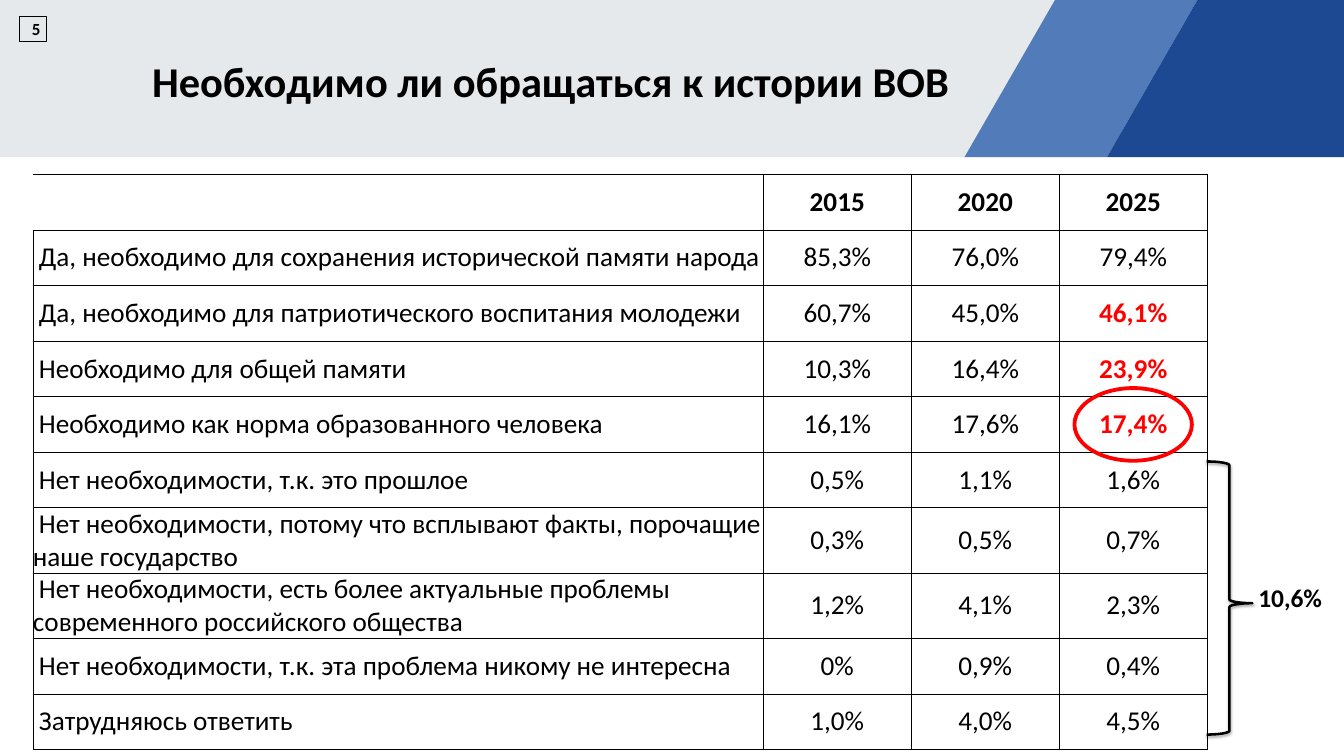
from dataclasses import dataclass

from lxml.etree import SubElement
from pptx import Presentation
from pptx.dml.color import RGBColor
from pptx.enum.shapes import MSO_SHAPE as Shape
from pptx.enum.text import MSO_ANCHOR as Anchor, PP_ALIGN as Align
from pptx.oxml import parse_xml
from pptx.oxml.ns import nsdecls, qn
from pptx.util import Cm, Pt


@dataclass(frozen=True)
class Theme:
    font: str = "Calibri"
    ink: str = "000000"
    accent: str = "FF0000"
    pale: str = "E6E9EB"
    blue: str = "517BB9"
    navy: str = "1D4992"
    title: float = 50
    body: float = 32
    total: float = 30
    number: float = 20
    grid: float = 0.5


@dataclass(frozen=True)
class Box:
    left: float
    top: float
    width: float
    height: float

    def emu(self) -> tuple:
        return Cm(self.left), Cm(self.top), Cm(self.width), Cm(self.height)


@dataclass(frozen=True)
class Band:
    color: str
    bottom_left: float
    bottom_right: float
    top_left: float
    top_right: float


@dataclass(frozen=True)
class Answer:
    label: str
    shares: tuple
    highlight: bool = False


@dataclass(frozen=True)
class Outline:
    kind: Shape
    box: Box
    color: str
    weight: float


THEME = Theme()
WIDTH, HEIGHT, HEADER = 55.85, 31.42, 6.53
FIRST_LINE = 0.25
COLUMNS = (30.35, 6.15, 6.15, 6.15)
ROW = 2.31
YEARS = ("2015", "2020", "2025")
BANDS = (
    Band(THEME.pale, 0, 40.16, 0, 43.92),
    Band(THEME.blue, 40.08, 46, 43.84, 49.76),
    Band(THEME.navy, 46, WIDTH, 49.76, WIDTH),
)
ANSWERS = (
    Answer("Да, необходимо для сохранения исторической памяти народа", ("85,3%", "76,0%", "79,4%")),
    Answer("Да, необходимо для патриотического воспитания молодежи", ("60,7%", "45,0%", "46,1%"), True),
    Answer("Необходимо для общей памяти", ("10,3%", "16,4%", "23,9%"), True),
    Answer("Необходимо как норма образованного человека", ("16,1%", "17,6%", "17,4%"), True),
    Answer("Нет необходимости, т.к. это прошлое", ("0,5%", "1,1%", "1,6%")),
    Answer("Нет необходимости, потому что всплывают факты, порочащие наше государство",
           ("0,3%", "0,5%", "0,7%")),
    Answer("Нет необходимости, есть более актуальные проблемы современного российского общества",
           ("1,2%", "4,1%", "2,3%")),
    Answer("Нет необходимости, т.к. эта проблема никому не интересна", ("0%", "0,9%", "0,4%")),
    Answer("Затрудняюсь ответить", ("1,0%", "4,0%", "4,5%")),
)
NUMBER_FRAME = Outline(Shape.RECTANGLE, Box(0.81, 0.66, 1.12, 1.07), THEME.ink, 0.75)
BRACE = Outline(Shape.RIGHT_BRACE, Box(50.14, 19.18, 1.9, 11.35), THEME.ink, 3)
RING = Outline(Shape.OVAL, Box(44.65, 16.13, 4.88, 3.02), THEME.accent, 4.5)


def write(tf, text: str, size: float, bold: bool = True, color: str = THEME.ink,
          align: Align = Align.LEFT, indent: float = 0) -> None:
    tf.text = text
    p = tf.paragraphs[0]
    p.alignment = align
    if indent:
        p._p.get_or_add_pPr().set("indent", str(Cm(indent)))
    for r in p.runs:
        r.font.name = THEME.font
        r.font.size = Pt(size)
        r.font.bold = bold
        r.font.color.rgb = RGBColor.from_string(color)


def add_band(s, band: Band) -> None:
    builder = s.shapes.build_freeform(Cm(band.bottom_right), Cm(HEADER))
    builder.add_line_segments([
        (Cm(band.bottom_left), Cm(HEADER)),
        (Cm(band.top_left), 0),
        (Cm(band.top_right), 0),
    ])
    sp = builder.convert_to_shape()
    sp.shadow.inherit = False
    sp.fill.solid()
    sp.fill.fore_color.rgb = RGBColor.from_string(band.color)
    sp.line.fill.background()


def add_outline(s, outline: Outline):
    sp = s.shapes.add_shape(outline.kind, *outline.box.emu())
    sp.shadow.inherit = False
    sp.fill.background()
    sp.line.color.rgb = RGBColor.from_string(outline.color)
    sp.line.width = Pt(outline.weight)
    return sp


def add_text(s, box: Box, text: str, size: float, **style):
    tf = s.shapes.add_textbox(*box.emu()).text_frame
    tf.word_wrap = True
    write(tf, text, size, **style)
    return tf


def set_borders(cell, open_left: bool) -> None:
    tcPr = cell._tc.get_or_add_tcPr()
    for i, side in enumerate("LRTB"):
        hidden = open_left and side == "L"
        fill = "<a:noFill/>" if hidden else f'<a:solidFill><a:srgbClr val="{THEME.ink}"/></a:solidFill>'
        tcPr.insert(i, parse_xml(
            f'<a:ln{side} {nsdecls("a")} w="{Pt(THEME.grid)}">{fill}</a:ln{side}>'))


def add_answers(s) -> None:
    rows = len(ANSWERS) + 1
    box = Box(1.37, 7.24, sum(COLUMNS), ROW * rows)
    table = s.shapes.add_table(rows, len(COLUMNS), *box.emu()).table
    table.first_row = table.horz_banding = False
    for column, width in zip(table.columns, COLUMNS):
        column.width = Cm(width)
    for i, row in enumerate(table.rows):
        row.height = Cm(ROW)
        for j, cell in enumerate(row.cells):
            cell.margin_left = cell.margin_right = cell.margin_top = cell.margin_bottom = 0
            cell.vertical_anchor = Anchor.MIDDLE
            cell.fill.background()
            set_borders(cell, open_left=i == j == 0)
    for j, year in enumerate(YEARS, 1):
        write(table.cell(0, j).text_frame, year, THEME.body, align=Align.CENTER)
    for i, answer in enumerate(ANSWERS, 1):
        write(table.cell(i, 0).text_frame, answer.label, THEME.body, bold=False, indent=FIRST_LINE)
        for j, share in enumerate(answer.shares, 1):
            marked = answer.highlight and j == len(YEARS)
            write(table.cell(i, j).text_frame, share, THEME.body, bold=marked,
                  color=THEME.accent if marked else THEME.ink, align=Align.CENTER)


def add_brace(s) -> None:
    sp = add_outline(s, BRACE)
    sp.adjustments[0], sp.adjustments[1] = 0.083, 0.519
    effects = sp._element.spPr.find(qn("a:effectLst"))
    shadow = SubElement(effects, qn("a:outerShdw"), blurRad=str(Pt(3.1)), dist=str(Pt(1.8)),
                        dir="5400000", rotWithShape="0")
    color = SubElement(shadow, qn("a:srgbClr"), val=THEME.ink)
    SubElement(color, qn("a:alpha"), val="35000")


def main() -> None:
    prs = Presentation()
    prs.slide_width, prs.slide_height = Cm(WIDTH), Cm(HEIGHT)
    s = prs.slides.add_slide(prs.slide_layouts[6])
    for band in BANDS:
        add_band(s, band)
    add_text(s, Box(3.38, 2.16, 37.54, 2.97), "Необходимо ли обращаться к истории ВОВ",
             THEME.title, align=Align.CENTER, indent=1.5)
    number = add_outline(s, NUMBER_FRAME).text_frame
    number.vertical_anchor = Anchor.MIDDLE
    write(number, "5", THEME.number, align=Align.RIGHT)
    add_answers(s)
    add_brace(s)
    total = add_text(s, Box(52.04, 24.08, 3.18, 1.55), "10,6%", THEME.total)
    total.margin_right = 0
    add_outline(s, RING)
    prs.save("out.pptx")


if __name__ == "__main__":
    main()
